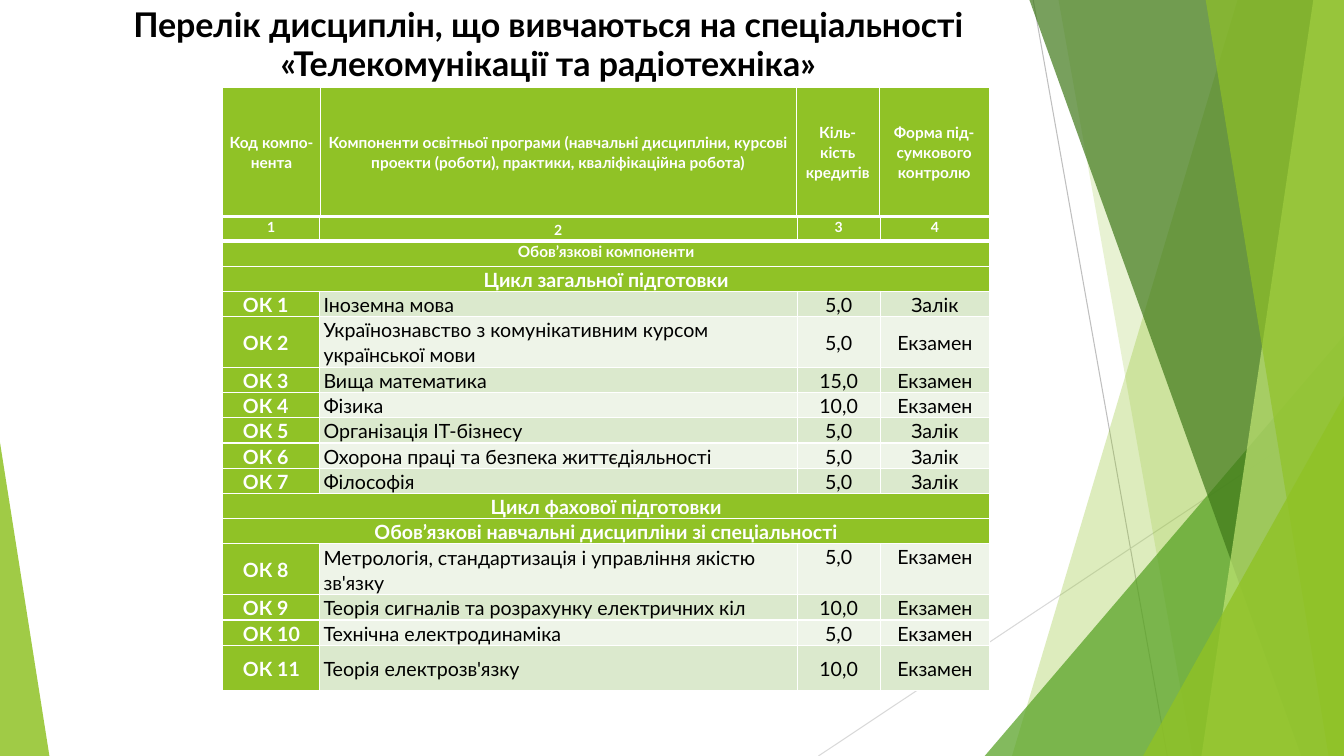
import dataclasses
from typing import Optional

import lxml.etree
import pptx
import pptx.dml.fill
import pptx.enum.shapes
import pptx.enum.text
import pptx.oxml.ns
import pptx.shapes.autoshape
import pptx.slide
import pptx.table
import pptx.text.text
import pptx.util

Pt = pptx.util.Pt
qn = pptx.oxml.ns.qn
ALIGN = pptx.enum.text.PP_ALIGN
ANCHOR = pptx.enum.text.MSO_ANCHOR

W, H = 960, 540
FONT = "Lato"
GREEN, WHITE, BLACK = "90C226", "FFFFFF", "000000"
BANDS = ("DBE9CD", "EEF4E8")


@dataclasses.dataclass
class Ray:
    start: tuple[float, float]
    end: tuple[float, float]
    color: str


@dataclasses.dataclass
class Band:
    top_left: float
    bottom_left: float
    color: str
    alpha: int


@dataclasses.dataclass
class Wedge:
    left: float
    top: float
    width: float
    height: float
    apex: float
    color: str
    alpha: int


@dataclasses.dataclass
class Style:
    size: float = 14
    color: str = WHITE
    bold: bool = True
    align: Optional[ALIGN] = ALIGN.CENTER
    anchor: ANCHOR = ANCHOR.MIDDLE
    fill: str = GREEN
    indent: float = 0
    bottom: float = 1


@dataclasses.dataclass
class Section:
    title: str
    size: float = 14
    anchor: ANCHOR = ANCHOR.TOP


@dataclasses.dataclass
class Course:
    number: int
    name: str
    credits: str
    control: str
    height: float = 18
    anchor: ANCHOR = ANCHOR.MIDDLE


RAYS = [
    Ray((738, 0), (833.8, H), "BFBFBF"),
    Ray((W, 290.2), (584.6, H), "D9D9D9"),
]
DECOR = [
    Band(884.2, 722.9, GREEN, 30),
    Band(756, 851.8, GREEN, 20),
    Wedge(703.4, 239.8, 256.6, 300.2, 1, "54A021", 72),
    Band(735.1, 929.5, "3F7819", 70),
    Band(938.2, 858.2, "C0E474", 70),
    Band(861.1, 949, GREEN, 65),
    Wedge(816.5, 283, 143.5, 257, 1, GREEN, 80),
    Wedge(0, 316.1, 35.3, 223.9, 0, GREEN, 85),
]
HEADINGS = [
    "Код компо- нента",
    "Компоненти освітньої програми (навчальні дисципліни, курсові проекти (роботи), практики, кваліфікаційна робота)",
    "Кіль- кість кредитів",
    "Форма під- сумкового контролю",
]
CURRICULUM = [
    Section("Обов’язкові компоненти", 11),
    Section("Цикл загальної підготовки"),
    Course(1, "Іноземна мова", "5,0", "Залік"),
    Course(2, "Українознавство з комунікативним курсом української мови", "5,0", "Екзамен", 36.4),
    Course(3, "Вища математика", "15,0", "Екзамен"),
    Course(4, "Фізика", "10,0", "Екзамен"),
    Course(5, "Організація IT-бізнесу", "5,0", "Залік"),
    Course(6, "Охорона праці та безпека життєдіяльності", "5,0", "Залік"),
    Course(7, "Філософія", "5,0", "Залік"),
    Section("Цикл фахової підготовки", anchor=ANCHOR.MIDDLE),
    Section("Обов’язкові навчальні дисципліни зі спеціальності", anchor=ANCHOR.MIDDLE),
    Course(8, "Метрологія, стандартизація і управління якістю зв'язку", "5,0", "Екзамен", 36.4, ANCHOR.TOP),
    Course(9, "Теорія сигналів та розрахунку електричних кіл", "10,0", "Екзамен"),
    Course(10, "Технічна електродинаміка", "5,0", "Екзамен"),
    Course(11, "Теорія електрозв'язку", "10,0", "Екзамен", 32.1),
]


def paint(fill: pptx.dml.fill.FillFormat, color: str, alpha: int = 100) -> None:
    fill.solid()
    fill.fore_color.rgb = pptx.dml.color.RGBColor.from_string(color)
    if alpha < 100:
        clr = fill._xPr.find(".//" + qn("a:srgbClr"))
        lxml.etree.SubElement(clr, qn("a:alpha"), val=str(alpha * 1000))


def format_text(p: pptx.text.text._Paragraph, size: float, color: str, bold: bool) -> None:
    p.font.name, p.font.size, p.font.bold = FONT, Pt(size), bold
    paint(p.font.fill, color)


def draw_ray(slide: pptx.slide.Slide, ray: Ray) -> None:
    line = slide.shapes.add_connector(
        pptx.enum.shapes.MSO_CONNECTOR.STRAIGHT, *map(Pt, ray.start + ray.end))
    line.line.width = Pt(0.75)
    paint(line.line.fill, ray.color)
    lxml.etree.SubElement(line.element.spPr, qn("a:effectLst"))


def draw_decor(slide: pptx.slide.Slide, item: Band | Wedge) -> None:
    if isinstance(item, Band):
        builder = slide.shapes.build_freeform(Pt(item.top_left), Pt(-0.7))
        builder.add_line_segments(
            [(Pt(W), Pt(-0.7)), (Pt(W), Pt(H)), (Pt(item.bottom_left), Pt(H))])
        sp = builder.convert_to_shape()
    else:
        sp = slide.shapes.add_shape(
            pptx.enum.shapes.MSO_SHAPE.ISOSCELES_TRIANGLE,
            Pt(item.left), Pt(item.top), Pt(item.width), Pt(item.height))
        sp.adjustments[0] = item.apex
    paint(sp.fill, item.color, item.alpha)
    sp.line.fill.background()
    sp.shadow.inherit = False


def fill_cell(cell: pptx.table._Cell, text: str, style: Style) -> None:
    cell.margin_left = cell.margin_right = Pt(2.9)
    cell.margin_top = cell.margin_bottom = 0
    cell.vertical_anchor = style.anchor
    tcPr = cell._tc.get_or_add_tcPr()
    for side in "LRTB":
        width = style.bottom if side == "B" else 1
        ln = lxml.etree.SubElement(tcPr, qn(f"a:ln{side}"), w=str(Pt(width)))
        solid = lxml.etree.SubElement(ln, qn("a:solidFill"))
        lxml.etree.SubElement(solid, qn("a:srgbClr"), val=WHITE)
    paint(cell.fill, style.fill)
    p = cell.text_frame.paragraphs[0]
    p.text = text
    p.alignment, p.line_spacing, p.space_after = style.align, 1.07, Pt(8)
    if style.indent:
        p._p.get_or_add_pPr().set("marL", str(Pt(style.indent)))
    format_text(p, style.size, style.color, style.bold)


def add_grid(slide: pptx.slide.Slide, top: float, widths: list[float],
             heights: list[float]) -> pptx.table.Table:
    table = slide.shapes.add_table(
        len(heights), len(widths), Pt(159.1), Pt(top), Pt(sum(widths)), Pt(sum(heights))).table
    table.first_row = table.horz_banding = False
    for col, width in zip(table.columns, widths):
        col.width = Pt(width)
    for row, height in zip(table.rows, heights):
        row.height = Pt(height)
    return table


def add_title(slide: pptx.slide.Slide, text: str) -> None:
    title = slide.shapes.title
    title.left, title.top, title.width, title.height = Pt(53.3), 0, Pt(676.8), Pt(61.2)
    slide.shapes.element.append(title.element)
    tf = title.text_frame
    tf.text, tf.word_wrap = text, True
    tf.auto_size, tf.vertical_anchor = pptx.enum.text.MSO_AUTO_SIZE.NONE, ANCHOR.TOP
    p = tf.paragraphs[0]
    p.alignment, p.line_spacing = ALIGN.CENTER, 0.98
    format_text(p, 24.3, BLACK, True)


def add_curriculum(slide: pptx.slide.Slide) -> None:
    heights = [16.6] + [getattr(entry, "height", 18) for entry in CURRICULUM]
    table = add_grid(slide, 155.5, [69.1, 341.2, 59.4, 78.2], heights)
    for col in range(4):
        anchor = ANCHOR.MIDDLE if col == 1 else ANCHOR.TOP
        fill_cell(table.cell(0, col), str(col + 1), Style(10, anchor=anchor, bottom=3))
    for row, entry in enumerate(CURRICULUM, 1):
        if isinstance(entry, Section):
            table.cell(row, 0).merge(table.cell(row, 3))
            fill_cell(table.cell(row, 0), entry.title, Style(entry.size, anchor=entry.anchor))
            continue
        plain = Style(color=BLACK, bold=False, anchor=entry.anchor, fill=BANDS[(row + 1) % 2])
        name = dataclasses.replace(plain, align=ALIGN.LEFT, anchor=ANCHOR.MIDDLE)
        fill_cell(table.cell(row, 0), f"ОК {entry.number}", Style(align=ALIGN.LEFT, indent=11.5))
        fill_cell(table.cell(row, 1), entry.name, name)
        fill_cell(table.cell(row, 2), entry.credits, plain)
        fill_cell(table.cell(row, 3), entry.control, plain)


def main() -> None:
    prs = pptx.Presentation()
    prs.slide_width, prs.slide_height = Pt(W), Pt(H)
    slide = prs.slides.add_slide(prs.slide_layouts[5])
    for ray in RAYS:
        draw_ray(slide, ray)
    for item in DECOR:
        draw_decor(slide, item)
    add_title(slide, "Перелік дисциплін, що вивчаються на спеціальності «Телекомунікації та радіотехніка»")
    header = add_grid(slide, 62.6, [69.8, 339.8, 59.4, 78.5], [92.2])
    for col, heading in enumerate(HEADINGS):
        fill_cell(header.cell(0, col), heading, Style(11, bottom=3))
    add_curriculum(slide)
    prs.save("out.pptx")


if __name__ == "__main__":
    main()
